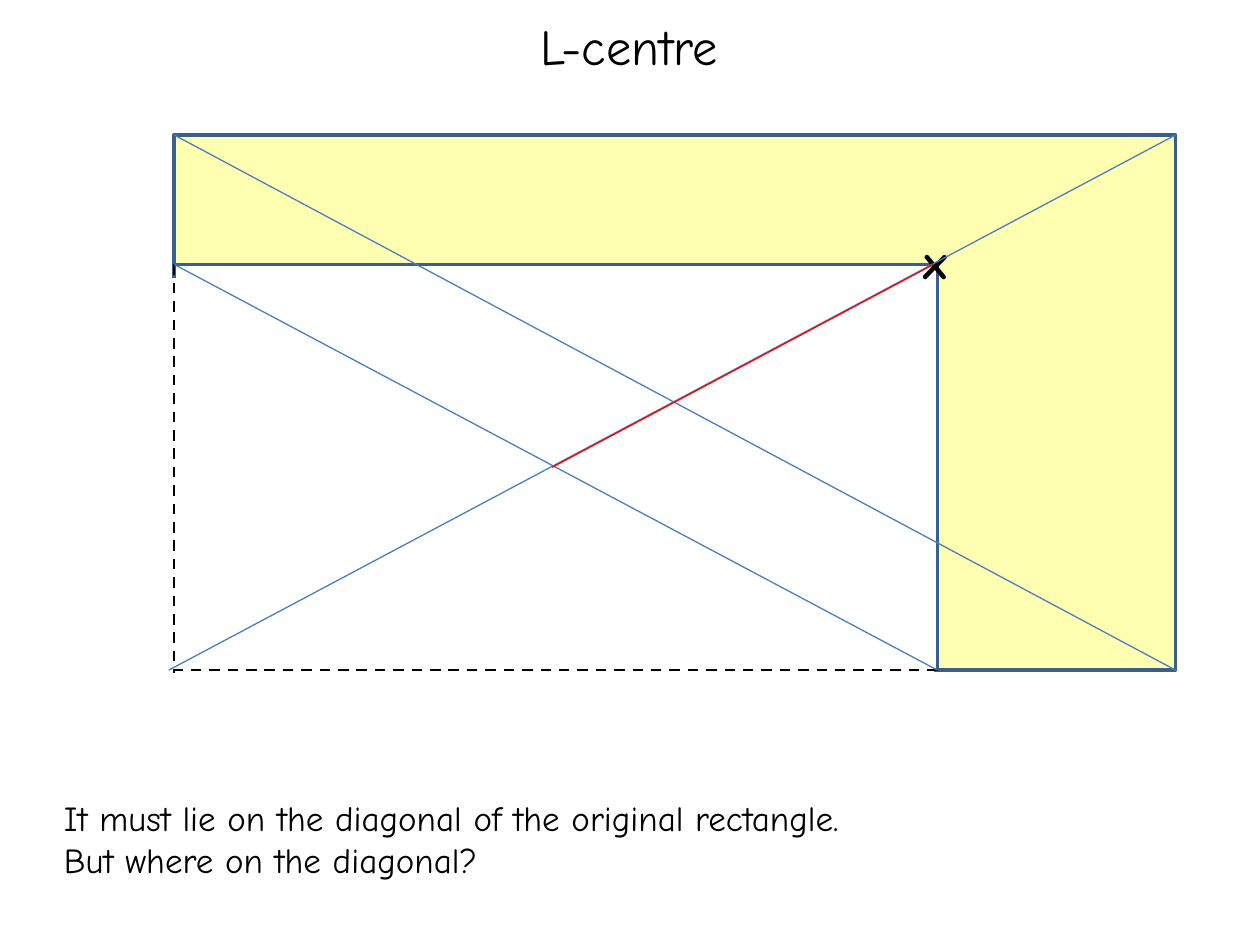
from pptx import Presentation
from pptx.dml.color import RGBColor
from pptx.enum.dml import MSO_LINE
from pptx.enum.shapes import MSO_CONNECTOR, MSO_SHAPE
from pptx.enum.text import MSO_ANCHOR, PP_ALIGN
from pptx.oxml.ns import qn
from pptx.util import Cm, Pt
from lxml.etree import SubElement

BLACK = RGBColor(0x00, 0x00, 0x00)
WHITE = RGBColor(0xFF, 0xFF, 0xFF)
YELLOW = RGBColor(0xFF, 0xFF, 0x00)
NAVY = RGBColor(0x3A, 0x5F, 0x8C)
BLUE = RGBColor(0x4B, 0x7E, 0xBC)
RED = RGBColor(0xFF, 0x00, 0x00)

deck = Presentation()
deck.slide_width, deck.slide_height = Cm(25.4), Cm(19.05)
slide = deck.slides.add_slide(deck.slide_layouts[6])

left, top, right, base = 3.51, 2.72, 23.7, 13.51
notch_x, notch_y = 18.9, 5.33

rects = [
    (left, top, right, base, YELLOW, NAVY),
    (left, notch_y, notch_x, base, WHITE, NAVY),
    (3.4, 5.64, 18.8, 13.59, WHITE, WHITE),
]
for x1, y1, x2, y2, fill, edge in rects:
    rect = slide.shapes.add_shape(
        MSO_SHAPE.RECTANGLE, Cm(x1), Cm(y1), Cm(x2 - x1), Cm(y2 - y1))
    rect.shadow.inherit = False
    rect.fill.solid()
    rect.fill.fore_color.rgb = fill
    rect.line.color.rgb = edge
    rect.line.width = Pt(2)
    if fill == YELLOW:
        color = rect._element.spPr.find(qn("a:solidFill"))[0]
        SubElement(color, qn("a:alpha")).set("val", "30000")


def add_text(x, y, w, h, lines, size, anchor, align=PP_ALIGN.LEFT, bold=False, wrap=True):
    box = slide.shapes.add_textbox(Cm(x), Cm(y), Cm(w), Cm(h))
    frame = box.text_frame
    frame.word_wrap = wrap
    frame.vertical_anchor = anchor
    frame.text = "\n".join(lines)
    for para in frame.paragraphs:
        para.alignment = align
        para.font.name = "Comic Neue"
        para.font.size = Pt(size)
        para.font.bold = bold
        para.font.color.rgb = BLACK


add_text(9.47, 0.13, 6.43, 1.55, ["L-centre"], 28.8, MSO_ANCHOR.MIDDLE, PP_ALIGN.CENTER)
add_text(18.36, 4.52, 1.09, 1.45, ["x"], 28, MSO_ANCHOR.TOP, bold=True, wrap=False)

lines = [
    (notch_x, base, left, base, BLACK, 1.5),
    (left, notch_y, left, 13.56, BLACK, 1.5),
    (left, notch_y, notch_x, base, BLUE, 0.75),
    (left, top, right, base, BLUE, 0.75),
    (3.4, base, right, top, BLUE, 0.75),
    (18.82, notch_y, 11.13, 9.42, RED, 0.75),
]
for x1, y1, x2, y2, color, width in lines:
    line = slide.shapes.add_connector(
        MSO_CONNECTOR.STRAIGHT, Cm(x1), Cm(y1), Cm(x2), Cm(y2))
    line.line.color.rgb = color
    line.line.width = Pt(width)
    if color == BLACK:
        line.line.dash_style = MSO_LINE.DASH
    SubElement(line._element.spPr, qn("a:effectLst"))

add_text(1.04, 14.2, 22.66, 3.68, [
    "It must lie on the diagonal of the original rectangle.",
    "But where on the diagonal?",
], 20, MSO_ANCHOR.BOTTOM)

deck.save("out.pptx")
